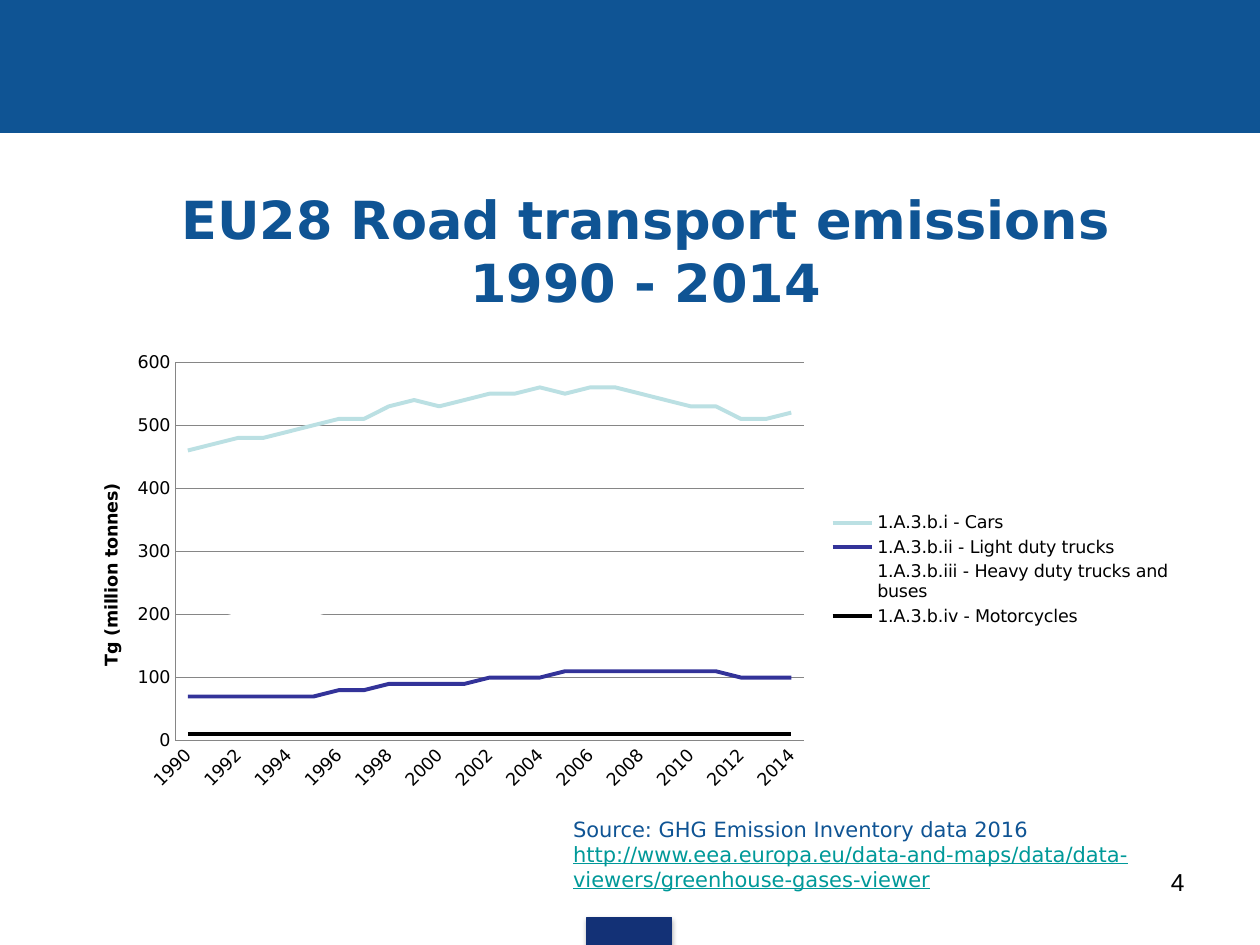
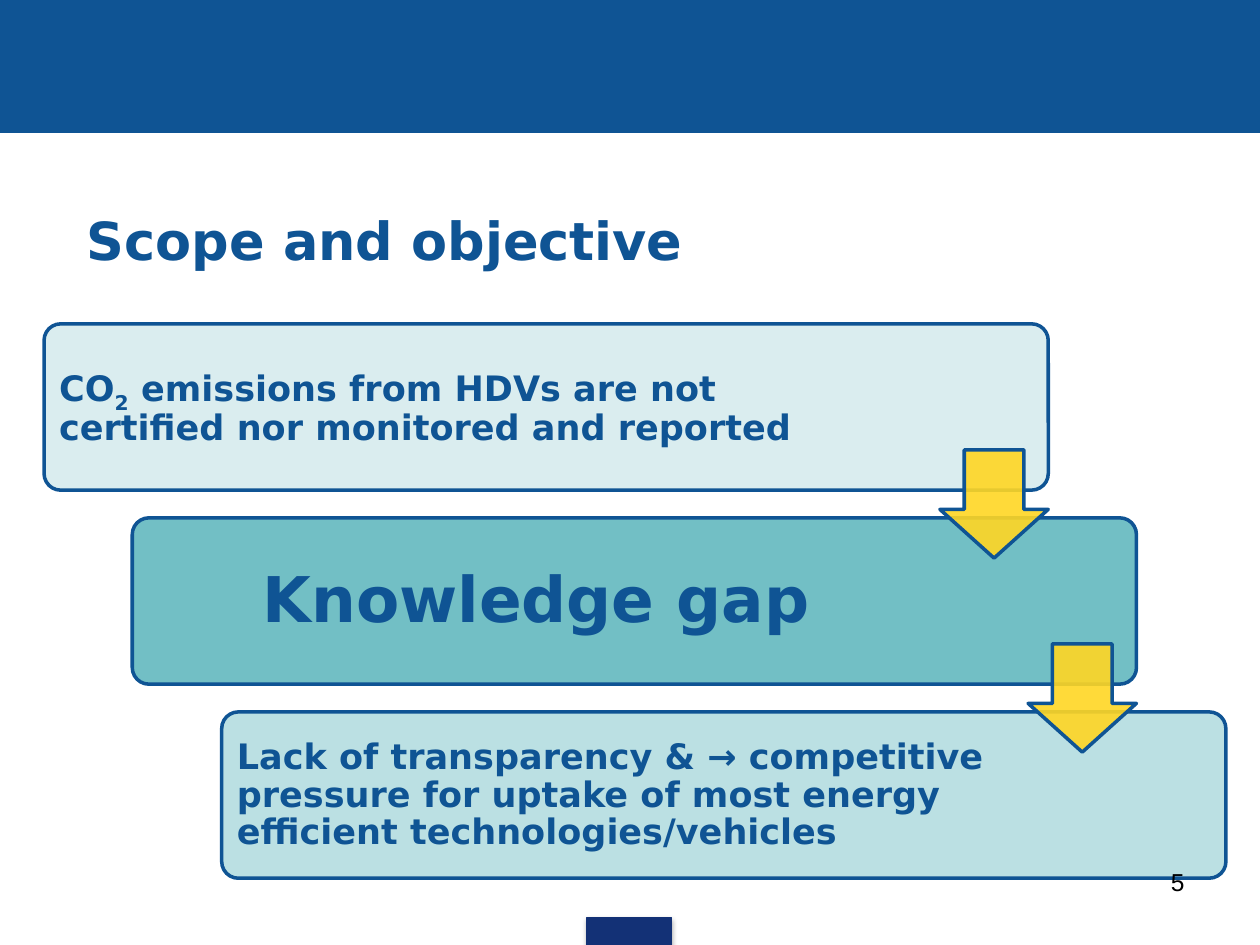
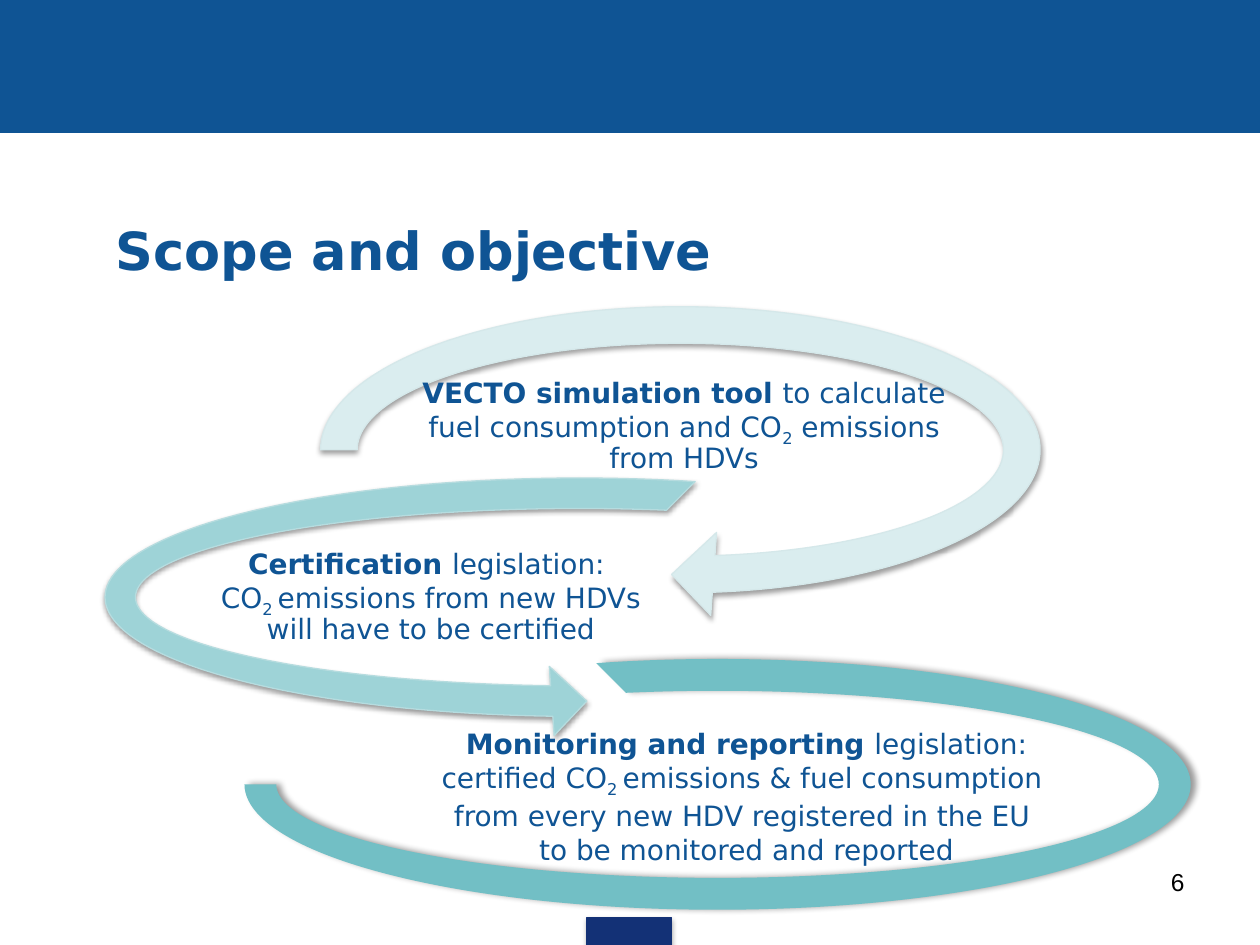
from lxml.etree import SubElement as Sub
from pptx import Presentation as Deck
from pptx.chart.data import CategoryChartData as Data
from pptx.dml.color import RGBColor as Rgb
from pptx.enum.chart import XL_CHART_TYPE as Kind, XL_LEGEND_POSITION as Spot, XL_TICK_MARK as Tick
from pptx.enum.shapes import MSO_SHAPE as Form
from pptx.enum.text import MSO_ANCHOR as Anchor, PP_ALIGN as Align
from pptx.oxml import parse_xml
from pptx.oxml.ns import nsdecls, qn
from pptx.util import Pt

PX = 9144
FONT = "DejaVu Sans"
HUES = {
    "blue": "0F5494", "navy": "133176", "ink": "000000", "grey": "868686",
    "white": "FFFFFF", "link": "009999", "pale": "DAEDEF", "aqua": "BBE0E3",
    "teal": "72BFC5", "mid": "9ED3D7", "gold": "FFD624", "violet": "333399",
    "rim": "D5E8EA", "edge": "B6DCDF",
}
YEARS = [str(year) for year in range(1990, 2015)]
TRAFFIC = [
    ("1.A.3.b.i - Cars", "aqua",
     [460, 470, 480, 480, 490, 500, 510, 510, 530, 540, 530, 540, 550,
      550, 560, 550, 560, 560, 550, 540, 530, 530, 510, 510, 520]),
    ("1.A.3.b.ii - Light duty trucks", "violet",
     [70] * 6 + [80] * 2 + [90] * 4 + [100] * 3 + [110] * 7 + [100] * 3),
    ("1.A.3.b.iii - Heavy duty trucks and buses", "white",
     [190, 190, 200, 200, 200, 200, 210, 210, 220, 220, 220, 230, 230,
      230, 240, 240, 240, 250, 240, 230, 230, 230, 220, 220, 210]),
    ("1.A.3.b.iv - Motorcycles", "ink", [10] * 25),
]
CARDS = [
    ("pale", 654, 20, 8, Align.LEFT,
     [("CO", ""), ("2", "sub"), (" emissions from HDVs are not certified nor monitored and reported", "")]),
    ("teal", 633, 36, 15, Align.CENTER, [("Knowledge gap", "")]),
    ("aqua", 633, 20, 8, Align.LEFT,
     [("Lack of transparency & → competitive pressure for uptake of most "
       "energy efficient technologies/vehicles", "")]),
]
LOOPS = [
    (Form.CIRCULAR_ARROW, (236, 225, 608, 264), (0.11, 11.42, 45, 108, 0.125),
     "pale", "rim", (38, 3.1, 1.6, 90), (330, 307, 426, 64), 0.9,
     [[("VECTO simulation tool ", "bold"), ("to calculate fuel consumption and CO", ""),
       ("2", "sub"), (" emissions from HDVs", "")]]),
    (Form.LEFT_CIRCULAR_ARROW, (68, 364, 784, 220), (0.11, 11.42, 63, 189, 0.125),
     "mid", "edge", (38, 3.1, 1.6, 90), (161, 399, 362, 151), 0.9,
     [[("Certification ", "bold"), ("legislation: ", "")],
      [("CO", ""), ("2 ", "sub"), ("emissions from new HDVs will have to be certified", "")]]),
    (Form.BLOCK_ARC, (194, 523, 751, 199), (135, 108, 0.127),
     "teal", None, (40, 4, 3, 0), (235, 551, 715, 162), None,
     [[("Monitoring and reporting ", "bold"), ("legislation:", "")],
      [("certified CO", ""), ("2 ", "sub"), ("emissions & fuel consumption ", "")],
      [("from every new HDV registered in the EU ", "")],
      [("to be monitored and reported", "")]]),
]


def hue(name):
    """Return the named colour."""
    return Rgb.from_string(HUES[name])


def place(part, index, inner=False, **box):
    """Set a manual chart layout on a part."""
    for old in part.findall(qn("c:layout")):
        part.remove(old)
    rules = '<c:layoutTarget val="inner"/>' if inner else ""
    rules += "".join(f'<c:{key}Mode val="edge"/>' for key in "xy")
    rules += "".join(f'<c:{key} val="{val}"/>' for key, val in box.items())
    part.insert(index, parse_xml(
        f'<c:layout {nsdecls("c")}><c:manualLayout>{rules}</c:manualLayout></c:layout>'))


class Board:
    """Hold the house style and the current slide."""

    def __init__(self):
        """Open an empty deck."""
        self.deck = Deck()
        self.deck.slide_width, self.deck.slide_height = 1000 * PX, 750 * PX
        self.slide = None

    def page(self, title, left=43, top=147, align=Align.LEFT):
        """Start a slide with its bands and title."""
        self.slide = self.deck.slides.add_slide(self.deck.slide_layouts[6])
        self.shape(Form.RECTANGLE, (0, 0, 1000, 105), "blue", "blue")
        self.shape(Form.RECTANGLE, (466, 728, 67, 22), "navy", "navy", shade=(35, 3.1, 1.8, 90))
        box = self.text((left, top, 900, 102), [[(title, "")]], 30, align=align,
                        bold=True, anchor=Anchor.MIDDLE)
        box.text_frame.paragraphs[0]._p.get_or_add_pPr().set("marL", str(39 * PX))

    def number(self, num):
        """Write the slide number."""
        self.text((717, 683, 233, 52), [[(str(num), "")]], 14, "ink", Align.RIGHT, font="Arial")

    def shape(self, form, box, fill, line=None, width=0.75, adj=(), shade=None, alpha=None):
        """Draw a preset shape."""
        item = self.slide.shapes.add_shape(form, *(val * PX for val in box))
        for num, val in enumerate(adj):
            item.adjustments[num] = val
        item.fill.solid()
        item.fill.fore_color.rgb = hue(fill)
        if alpha:
            tint = item._element.spPr.find(qn("a:solidFill"))[0]
            Sub(tint, qn("a:alpha"), val=str(alpha * 1000))
        if line:
            item.line.color.rgb = hue(line)
            item.line.width = Pt(width)
        else:
            item.line.fill.background()
        item.shadow.inherit = False
        if shade:
            self.shade(item, *shade)
        return item

    def shade(self, item, alpha, blur, dist, angle):
        """Cast a soft black shadow."""
        glow = Sub(item._element.spPr.find(qn("a:effectLst")), qn("a:outerShdw"),
                   blurRad=str(Pt(blur)), dist=str(Pt(dist)), dir=str(angle * 60000),
                   rotWithShape="0")
        tint = Sub(glow, qn("a:srgbClr"), val=HUES["ink"])
        Sub(tint, qn("a:alpha"), val=str(alpha * 1000))

    def text(self, box, paras, size, color="blue", align=Align.LEFT, bold=False,
             anchor=Anchor.TOP, pad=None, space=None, font=FONT):
        """Write paragraphs made of (words, style) runs."""
        item = self.slide.shapes.add_textbox(*(val * PX for val in box))
        frame = item.text_frame
        frame.word_wrap = True
        frame.vertical_anchor = anchor
        if pad is not None:
            frame.margin_left = frame.margin_right = pad * PX
            frame.margin_top = frame.margin_bottom = pad * PX
        for num, runs in enumerate(paras):
            para = frame.add_paragraph() if num else frame.paragraphs[0]
            para.alignment = align
            if space:
                para.line_spacing = space
            para.font.name, para.font.size = font, Pt(size)
            para.font.bold = bold
            para.font.color.rgb = hue(color)
            for words, style in runs:
                run = para.add_run()
                run.text = words
                if style == "bold":
                    run.font.bold = True
                elif style == "sub":
                    run._r.get_or_add_rPr().set("baseline", "-25000")
                elif style == "link":
                    run.font.underline = True
                    run.font.color.rgb = hue("link")
        return item

    def chart(self, box, cats, rows, label):
        """Draw a line chart with its legend on the right."""
        data = Data()
        data.categories = cats
        for name, _, vals in rows:
            data.add_series(name, vals)
        chart = self.slide.shapes.add_chart(
            Kind.LINE, *(val * PX for val in box), data).chart
        chart.has_title = False
        chart.font.name, chart.font.size = FONT, Pt(10)
        chart.font.color.rgb = hue("ink")
        plot = chart.plots[0]
        plot.vary_by_categories = False
        for line, (_, color, _) in zip(plot.series, rows):
            line.smooth = False
            line.format.line.color.rgb = hue(color)
            line.format.line.width = Pt(2.25)
        chart.has_legend = True
        chart.legend.position = Spot.RIGHT
        chart.legend.include_in_layout = False
        place(chart.legend._element, 1, x=0.68, y=0.36, w=0.31, h=0.27)
        self.axes(chart, label)
        place(chart._chartSpace.chart.plotArea, 0, True, x=0.1, y=0.04, w=0.56, h=0.83)

    def axes(self, chart, label):
        """Style both axes of a chart."""
        base, side = chart.category_axis, chart.value_axis
        for axis in (base, side):
            axis.major_tick_mark = axis.minor_tick_mark = Tick.NONE
            axis.format.line.color.rgb = hue("grey")
        base.tick_labels.font.size = Pt(10)
        base._element.find(qn("c:txPr")).find(qn("a:bodyPr")).set("rot", "-2700000")
        base._element.find(qn("c:noMultiLvlLbl")).addprevious(
            parse_xml(f'<c:tickLblSkip {nsdecls("c")} val="2"/>'))
        side.minimum_scale, side.maximum_scale, side.major_unit = 0, 600, 100
        side.has_major_gridlines = True
        side.major_gridlines.format.line.color.rgb = hue("grey")
        frame = side.axis_title.text_frame
        frame.text = label
        frame._txBody.bodyPr.set("rot", "-5400000")
        font = frame.paragraphs[0].font
        font.name, font.size, font.bold = FONT, Pt(10), True
        font.color.rgb = hue("ink")
        place(side.axis_title._element, 1, x=0.03, y=0.3)


def trend(board):
    """Build the emissions chart slide."""
    board.page("EU28 Road transport emissions 1990 - 2014", align=Align.CENTER)
    board.chart((50, 273, 891, 362), YEARS, TRAFFIC, "Tg (million tonnes)")
    link = "http://www.eea.europa.eu/data-and-maps/data/data-viewers/greenhouse-gases-viewer"
    board.text((445, 643, 500, 71), [[("Source: GHG Emission Inventory data 2016 ", ""),
                                      (link, "link"), (" ", "")]], 12)
    board.number(4)


def steps(board):
    """Build the stepped cards slide."""
    board.page("Scope and objective", 20, 139)
    for num, (fill, width, size, pad, align, runs) in enumerate(CARDS):
        left, top = 35 + num * 141 // 2, 257 + num * 154
        board.shape(Form.ROUNDED_RECTANGLE, (left, top, 797, 132), fill, "blue", 2, (0.1,))
        board.text((left + 4, top + 4, width, 125), [runs], size, align=align, bold=True,
                   anchor=Anchor.MIDDLE, pad=pad, space=0.9)
    for num in range(len(CARDS) - 1):
        board.shape(Form.DOWN_ARROW, (746 + num * 70, 357 + num * 154, 86, 86),
                    "gold", "blue", 2, (0.55, 0.45), alpha=90)
    board.number(5)


def loops(board):
    """Build the looping arrows slide."""
    board.page("Scope and objective")
    for form, ring, adj, fill, line, shade, box, space, paras in LOOPS:
        board.shape(form, ring, fill, line, adj=adj, shade=shade)
        board.text(box, paras, 16, align=Align.CENTER, anchor=Anchor.MIDDLE, pad=1, space=space)
    board.number(6)


def main():
    """Build and save the deck."""
    board = Board()
    for build in (trend, steps, loops):
        build(board)
    board.deck.save("out.pptx")


if __name__ == "__main__":
    main()
